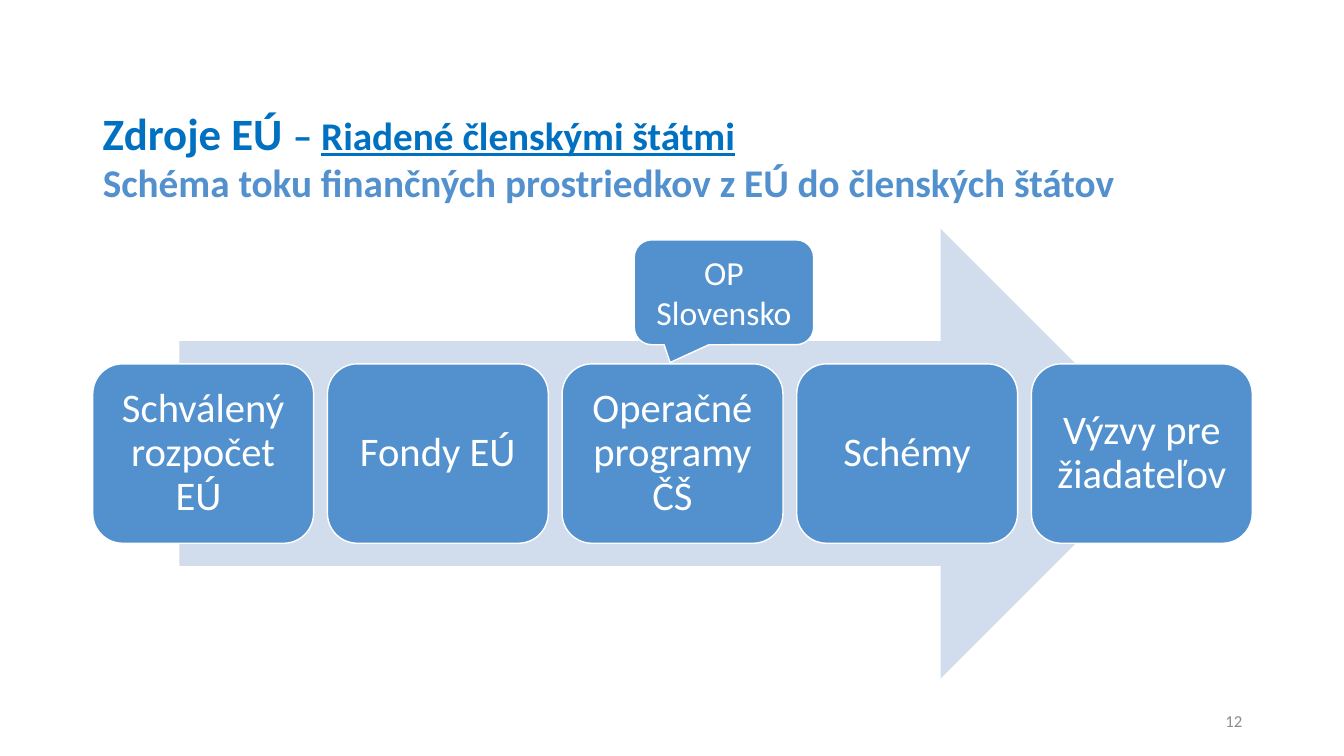
"""Build the slide on the flow of EU funds to member states."""
import pptx
import pptx.dml.color
import pptx.enum.shapes
import pptx.enum.text
import pptx.util

Inches = pptx.util.Inches
Pt = pptx.util.Pt
Align = pptx.enum.text.PP_ALIGN
Shape = pptx.enum.shapes.MSO_SHAPE

HEADING = [("Zdroje EÚ ", 32, False), ("– ", 28, False), ("Riadené členskými štátmi", 28, True)]
SUBTITLE = "Schéma toku finančných prostriedkov z EÚ do členských štátov"
STEPS = ["Schválený rozpočet EÚ ", "Fondy EÚ", "Operačné programy ČŠ", "Schémy", "Výzvy pre žiadateľov"]
CALLOUT = "OP Slovensko"
PAGE = "12"

FONT = "Calibri"
BLUE, DEEP_BLUE, PALE, WHITE, GREY = "5291CE", "0070C0", "D1DCED", "FFFFFF", "8C8C8C"
LEFT, WIDTH = 0.92, 11.5
STEP_WIDTH, STEP_HEIGHT, STEP_TOP = 2.19, 1.78, 3.61
STEP_PITCH = (WIDTH - STEP_WIDTH) / (len(STEPS) - 1)


def rgb(value):
    return pptx.dml.color.RGBColor.from_string(value)


def style(shape, size, color, align, bold=False, spacing=1.0):
    frame = shape.text_frame
    frame.word_wrap = True
    frame.auto_size = pptx.enum.text.MSO_AUTO_SIZE.NONE
    frame.vertical_anchor = pptx.enum.text.MSO_ANCHOR.MIDDLE
    paragraph = frame.paragraphs[0]
    paragraph.alignment = align
    paragraph.line_spacing = spacing
    paragraph.font.name = FONT
    paragraph.font.size = Pt(size)
    paragraph.font.bold = bold
    paragraph.font.color.rgb = rgb(color)


def add_block(slide, preset, left, top, width, height, fill, outlined=True):
    block = slide.shapes.add_shape(preset, Inches(left), Inches(top), Inches(width), Inches(height))
    block.shadow.inherit = False
    block.fill.solid()
    block.fill.fore_color.rgb = rgb(fill)
    if outlined:
        block.line.color.rgb = rgb(WHITE)
        block.line.width = Pt(1)
    else:
        block.line.fill.background()
    return block


def main():
    deck = pptx.Presentation()
    deck.slide_width, deck.slide_height = Inches(13.33), Inches(7.5)
    slide = deck.slides.add_slide(deck.slide_layouts[5])

    title = slide.shapes.title
    title.left, title.top = Inches(LEFT), Inches(1.4)
    title.width, title.height = Inches(WIDTH), Inches(0.87)
    title.text_frame.text = SUBTITLE
    style(title, 28, BLUE, Align.LEFT, bold=True, spacing=0.9)

    page = slide.shapes.add_textbox(Inches(9.42), Inches(6.95), Inches(3), Inches(0.4))
    page.text_frame.text = PAGE
    style(page, 12, GREY, Align.RIGHT)

    add_block(slide, Shape.RIGHT_ARROW, 1.78, 2.27, 9.78, 4.46, PALE, outlined=False)
    for index, label in enumerate(STEPS):
        step = add_block(slide, Shape.ROUNDED_RECTANGLE, LEFT + index * STEP_PITCH, STEP_TOP,
                         STEP_WIDTH, STEP_HEIGHT, BLUE)
        frame = step.text_frame
        frame.text = label
        frame.margin_left = frame.margin_right = Inches(0.12)
        frame.margin_top = frame.margin_bottom = Inches(0.12)
        style(step, 29, WHITE, Align.CENTER, spacing=0.9)

    heading = slide.shapes.add_textbox(Inches(LEFT), Inches(0.99), Inches(WIDTH), Inches(0.72))
    style(heading, 32, DEEP_BLUE, Align.LEFT, bold=True, spacing=0.9)
    for text, size, underlined in HEADING:
        run = heading.text_frame.paragraphs[0].add_run()
        run.text = text
        run.font.size = Pt(size)
        run.font.underline = underlined

    callout = add_block(slide, Shape.ROUNDED_RECTANGULAR_CALLOUT, 6.29, 2.38, 1.78, 1.04, BLUE)
    callout.adjustments[0], callout.adjustments[1] = -0.3, 0.67
    callout.text_frame.text = CALLOUT
    style(callout, 24, WHITE, Align.CENTER)

    deck.save("out.pptx")


if __name__ == "__main__":
    main()
